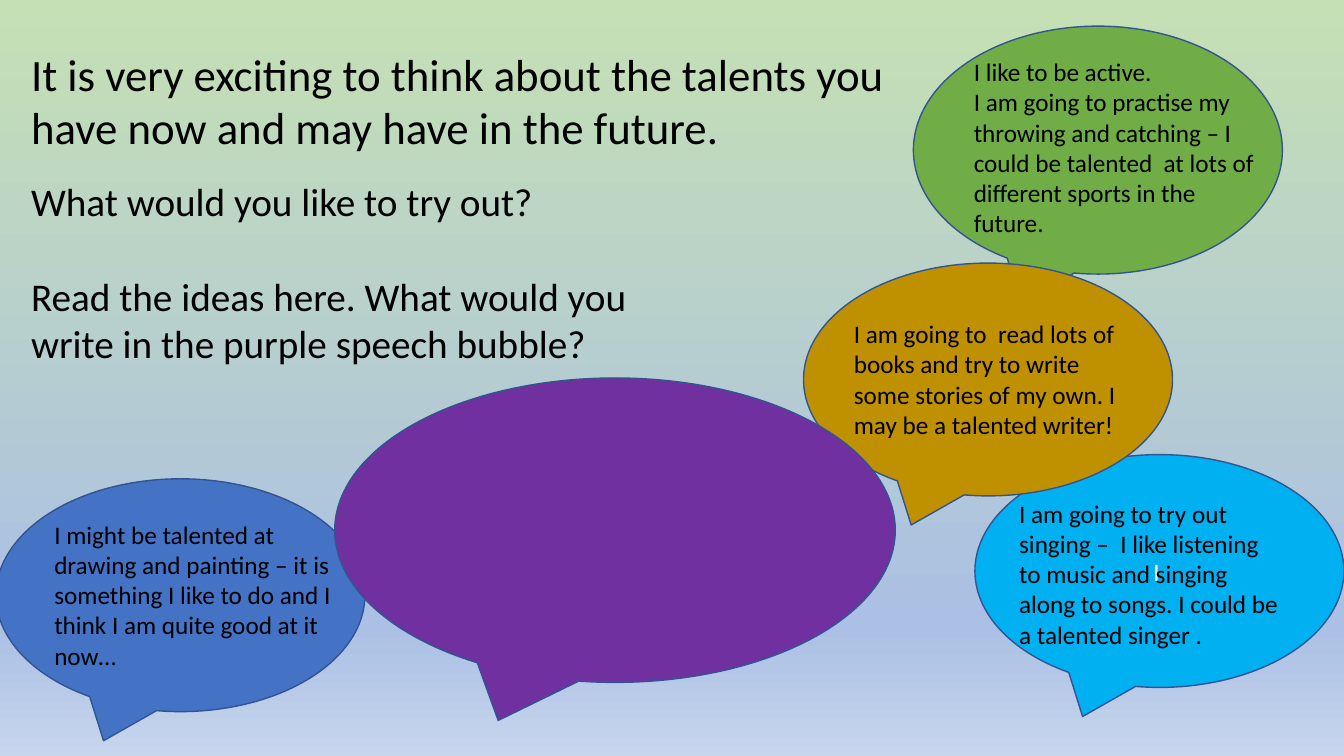
"""Build a slide of speech bubbles about future talents."""
from copy import deepcopy

from pptx import Presentation
from pptx.dml.color import RGBColor
from pptx.enum.shapes import MSO_SHAPE
from pptx.enum.text import MSO_ANCHOR, MSO_AUTO_SIZE, PP_ALIGN
from pptx.util import Inches, Pt

COLOURS = {
    "black": "000000", "white": "FFFFFF", "outline": "325491",
    "blue": "4472C4", "cyan": "00B0F0", "green": "70AD47",
    "ochre": "BF9000", "purple": "7030A0",
    "sky_top": "C5E0B4", "sky_low": "ABC0E4", "sky_bottom": "C7D5ED",
}
FONT = "Calibri"
SKY = [("sky_top", 0), ("sky_low", 0.83), ("sky_bottom", 1)]
HEADINGS = [
    ((0.21, 0.41, 9.23, 1.18), 32,
     ["It is very exciting to think about the talents you have now and may have in the future."]),
    ((0.21, 1.71, 6.79, 1.99), 28,
     ["What would you like to try out?",
      "Read the ideas here. What would you write in the purple speech bubble?"]),
]
QUESTION_GAP = 34
IDEA_SIZE = 18
BUBBLES = [
    ("blue", (-0.04, 4.75, 3.66, 2.31), "", (0.44, 5.1, 2.96, 1.62),
     ["I might be talented at drawing and painting – it is something I like to do "
      "and I think I am quite good at it now…"]),
    ("cyan", (9.67, 4.51, 3.66, 2.31), "I ", (10.01, 4.89, 2.77, 1.62),
     ["I am going to try out singing –  I like listening to music and singing "
      "along to songs. I could be a talented singer ."]),
    ("green", (9.06, 0.26, 3.66, 2.46), "", (9.56, 0.51, 3.04, 1.92),
     ["I like to be active.",
      "I am going to practise my throwing and catching – I could be talented  at lots "
      "of different sports in the future."]),
    ("ochre", (7.97, 2.61, 3.66, 2.31), "", (8.37, 3.11, 2.9, 1.31),
     ["I am going to  read lots of books and try to write some stories of my own. "
      "I may be a talented writer!"]),
    ("purple", (3.32, 3.75, 5.56, 3.02), "", None, []),
]


def colour(name):
    return RGBColor.from_string(COLOURS[name])


def style(paragraph, size, colour_name):
    paragraph.font.name = FONT
    paragraph.font.size = Pt(size)
    paragraph.font.color.rgb = colour(colour_name)


def add_text(slide, box, size, lines, gap=0):
    frame = slide.shapes.add_textbox(*map(Inches, box)).text_frame
    frame.word_wrap = True
    frame.auto_size = MSO_AUTO_SIZE.SHAPE_TO_FIT_TEXT
    frame.text = "\n".join(lines)
    for index, paragraph in enumerate(frame.paragraphs):
        style(paragraph, size, "black")
        paragraph.space_before = Pt(gap if index else 0)


def add_bubble(slide, fill, box, label):
    shape = slide.shapes.add_shape(MSO_SHAPE.OVAL_CALLOUT, *map(Inches, box))
    shape.shadow.inherit = False
    shape.fill.solid()
    shape.fill.fore_color.rgb = colour(fill)
    shape.line.color.rgb = colour("outline")
    shape.line.width = Pt(1)
    if label:
        shape.text_frame.text = label
        shape.text_frame.vertical_anchor = MSO_ANCHOR.MIDDLE
        paragraph = shape.text_frame.paragraphs[0]
        paragraph.alignment = PP_ALIGN.CENTER
        style(paragraph, IDEA_SIZE, "white")


def paint_sky(slide):
    fill = slide.background.fill
    fill.gradient()
    fill.gradient_angle = 270
    stop_list = slide.element.xpath(".//a:gsLst")[0]
    stop_list.append(deepcopy(stop_list[-1]))
    for stop, (name, position) in zip(fill.gradient_stops, SKY):
        stop.color.rgb = colour(name)
        stop.position = position


def main():
    presentation = Presentation()
    presentation.slide_width = Inches(13.33)
    presentation.slide_height = Inches(7.5)
    slide = presentation.slides.add_slide(presentation.slide_layouts[6])
    paint_sky(slide)
    for box, size, lines in HEADINGS:
        add_text(slide, box, size, lines, QUESTION_GAP)
    for fill, box, label, idea_box, idea in BUBBLES:
        add_bubble(slide, fill, box, label)
        if idea:
            add_text(slide, idea_box, IDEA_SIZE, idea)
    presentation.save("out.pptx")


if __name__ == "__main__":
    main()
